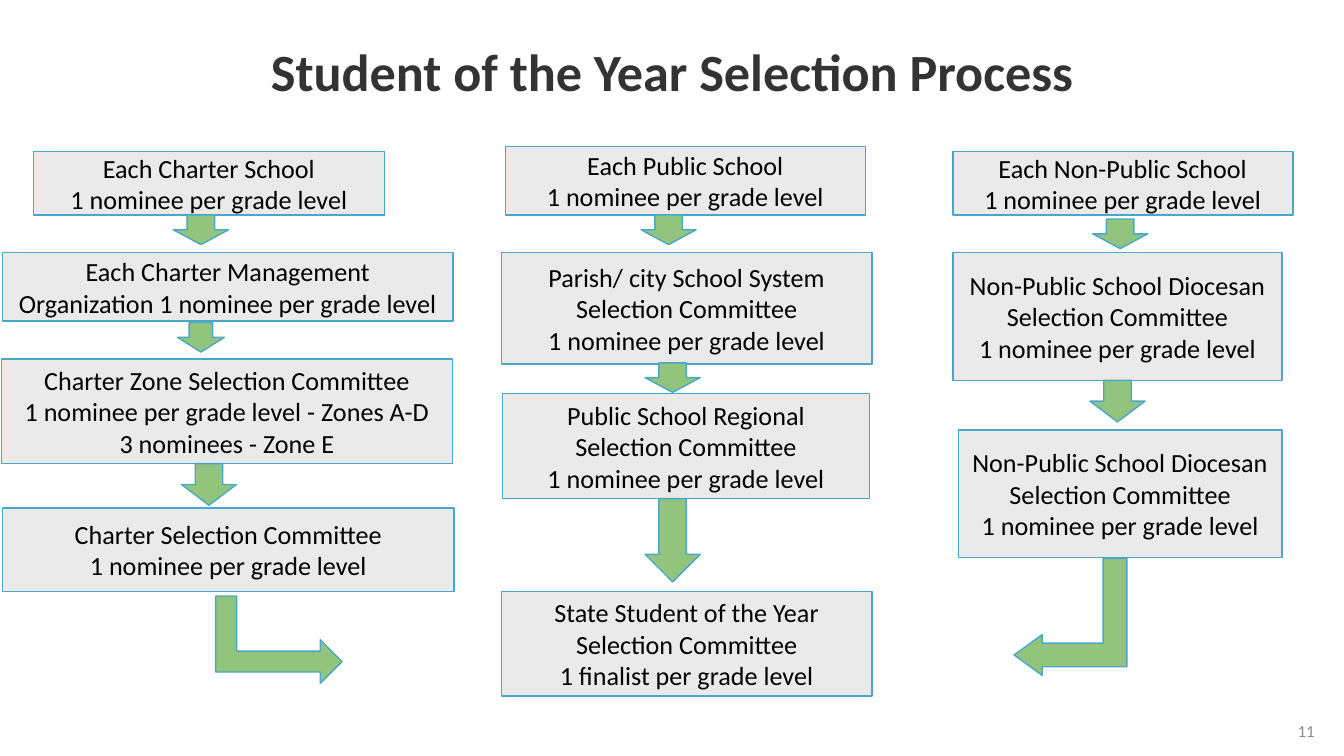
from pptx import Presentation
from pptx.dml.color import RGBColor
from pptx.enum.shapes import MSO_SHAPE
from pptx.enum.text import MSO_ANCHOR, PP_ALIGN
from pptx.util import Inches, Pt

RECTANGLE = MSO_SHAPE.RECTANGLE
DOWN_ARROW = MSO_SHAPE.DOWN_ARROW
BENT_ARROW = MSO_SHAPE.BENT_UP_ARROW
MIDDLE = MSO_ANCHOR.MIDDLE
CENTER = PP_ALIGN.CENTER
RIGHT = PP_ALIGN.RIGHT

GREY = RGBColor(0xEA, 0xEA, 0xEA)
BLUE = RGBColor(0x47, 0xA8, 0xCA)
GREEN = RGBColor(0x93, 0xC4, 0x7D)
BLACK = RGBColor(0x00, 0x00, 0x00)
CHARCOAL = RGBColor(0x33, 0x33, 0x33)
PALE_GREY = RGBColor(0x8A, 0x8A, 0x8A)

deck = Presentation()
deck.slide_width = Inches(10)
deck.slide_height = deck.slide_width * 9 // 16
COL = deck.slide_width / 100
ROW = deck.slide_height / 56.25
slide = deck.slides.add_slide(deck.slide_layouts[6])


def add_block(kind, left, top, width, height, fill):
    area = [round(n) for n in (left * COL, top * ROW, width * COL, height * ROW)]
    if kind is None:
        return slide.shapes.add_textbox(*area)
    block = slide.shapes.add_shape(kind, *area)
    block.shadow.inherit = False
    block.fill.solid()
    block.fill.fore_color.rgb = fill
    block.line.color.rgb = BLUE
    block.line.width = Pt(0.75)
    return block


def write(block, lines, size, color, align=CENTER, bold=False, inset=0.1):
    frame = block.text_frame
    frame.word_wrap = True
    frame.vertical_anchor = MIDDLE
    frame.margin_left = frame.margin_right = Inches(0.1)
    frame.margin_top = frame.margin_bottom = Inches(inset)
    frame.text = "\n".join(lines)
    for paragraph in frame.paragraphs:
        paragraph.alignment = align
        paragraph.font.name = "Calibri"
        paragraph.font.size = Pt(size)
        paragraph.font.bold = bold
        paragraph.font.color.rgb = color


page_number = add_block(None, 74.4, 52.5, 24.4, 3.8, None)
write(page_number, ["11"], 9, PALE_GREY, align=RIGHT, inset=0.05)

title = add_block(None, 0, -0.2, 100, 11.5, None)
write(title, ["Student of the Year Selection Process"], 28, CHARCOAL, bold=True)
title.text_frame.paragraphs[0].line_spacing = 0.9

NOMINEE = "1 nominee per grade level"
DIOCESAN = "Non-Public School Diocesan Selection Committee"
stages = [
    (2.5, 11.3, 26.1, 4.7, ["Each Charter School", NOMINEE]),
    (37.6, 10.9, 26.8, 5.1, ["Each Public School", NOMINEE]),
    (70.9, 11.3, 25.3, 4.7, ["Each Non-Public School", NOMINEE]),
    (0.2, 18.8, 33.5, 5.1, ["Each Charter Management Organization " + NOMINEE]),
    (0.1, 26.7, 33.6, 7.8, ["Charter Zone Selection Committee",
                            NOMINEE + " - Zones A-D", "3 nominees - Zone E"]),
    (0.2, 37.8, 33.6, 6.2, ["Charter Selection Committee", NOMINEE]),
    (37.3, 18.8, 27.6, 8.3, ["Parish/ city School System",
                             "Selection Committee", NOMINEE]),
    (37.4, 29.3, 27.3, 7.8, ["Public School Regional Selection Committee", NOMINEE]),
    (37.3, 44, 27.6, 7.8, ["State Student of the Year Selection Committee",
                           "1 finalist per grade level"]),
    (70.9, 18.8, 24.5, 9.5, [DIOCESAN, NOMINEE]),
    (71.3, 32, 24.1, 9.5, [DIOCESAN, NOMINEE]),
]
for left, top, width, height, lines in stages:
    write(add_block(RECTANGLE, left, top, width, height, GREY), lines, 14, BLACK)

steps = [
    (12.9, 16, 4.1, 2.2), (13.2, 24, 3.5, 2.2), (47.7, 16, 4.1, 2.2),
    (81.3, 16.3, 4.1, 2.2), (13.5, 34.5, 4.1, 3.1), (81.1, 28.3, 4.1, 3.1),
    (48, 37.1, 4.1, 6.2), (48, 27, 4.1, 2.2),
]
for step in steps:
    add_block(DOWN_ARROW, *step, GREEN)

turns = [
    ((17.5, 42.9, 6.5, 9.4), 90, (0.24, 0.25, 0.25), False),
    ((75.3, 41.7, 8.7, 8.4), 270, (0.21, 0.18, 0.25), True),
]
for area, rotation, proportions, mirrored in turns:
    turn = add_block(BENT_ARROW, *area, GREEN)
    turn.rotation = rotation
    for index, proportion in enumerate(proportions):
        turn.adjustments[index] = proportion
    if mirrored:
        turn._element.spPr.xfrm.set("flipH", "1")

deck.save("out.pptx")
